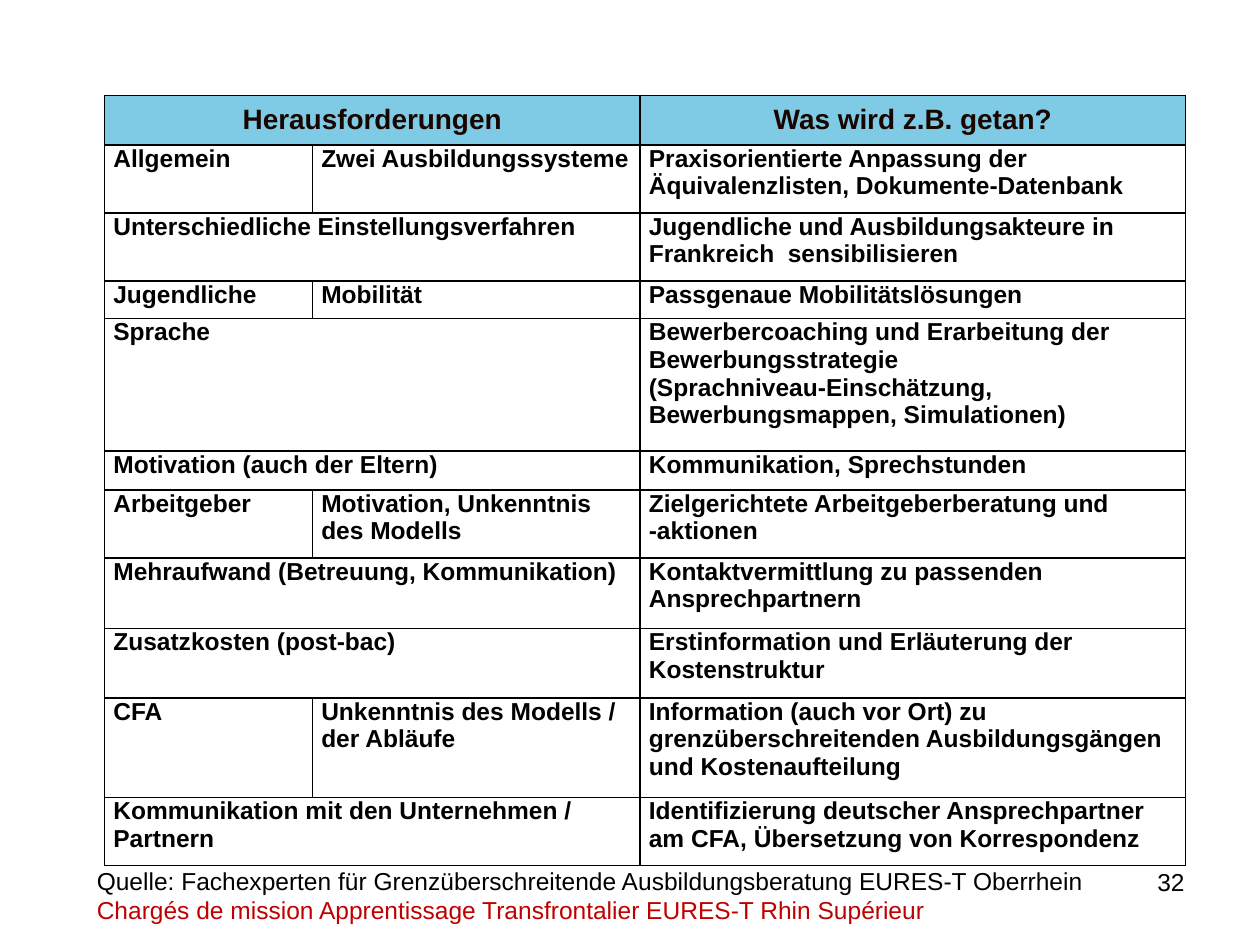
from lxml import etree
from pptx import Presentation
from pptx.dml.color import RGBColor
from pptx.enum.text import MSO_ANCHOR, PP_ALIGN
from pptx.oxml.ns import qn
from pptx.util import Inches, Pt

CENTER, LEFT, RIGHT = PP_ALIGN.CENTER, PP_ALIGN.LEFT, PP_ALIGN.RIGHT
MIDDLE, TOP = MSO_ANCHOR.MIDDLE, MSO_ANCHOR.TOP
FONT = "Arial"
COLORS = {"header": "0099CC", "header_text": "190601", "text": "000000",
          "border": "000000", "french": "C00000"}

# Content: row height, group, challenge, measure; no challenge means a merged cell
ROWS = [
    (0.39, "Herausforderungen", None, "Was wird z.B. getan?"),
    (0.54, "Allgemein", "Zwei Ausbildungssysteme",
     "Praxisorientierte Anpassung der\nÄquivalenzlisten, Dokumente-Datenbank"),
    (0.54, "Unterschiedliche Einstellungsverfahren", None,
     "Jugendliche und Ausbildungsakteure in Frankreich  sensibilisieren"),
    (0.3, "Jugendliche", "Mobilität", "Passgenaue Mobilitätslösungen"),
    (1.05, "Sprache", None,
     "Bewerbercoaching und Erarbeitung der\nBewerbungsstrategie\n"
     "(Sprachniveau-Einschätzung, Bewerbungsmappen, Simulationen)"),
    (0.31, "Motivation (auch der Eltern)", None, "Kommunikation, Sprechstunden"),
    (0.54, "Arbeitgeber", "Motivation, Unkenntnis des Modells",
     "Zielgerichtete Arbeitgeberberatung und -aktionen"),
    (0.56, "Mehraufwand (Betreuung, Kommunikation)", None,
     "Kontaktvermittlung zu passenden\nAnsprechpartnern"),
    (0.55, "Zusatzkosten (post-bac)", None,
     "Erstinformation und Erläuterung der\nKostenstruktur"),
    (0.79, "CFA", "Unkenntnis des Modells / der Abläufe",
     "Information (auch vor Ort) zu\ngrenzüberschreitenden Ausbildungsgängen\n"
     "und Kostenaufteilung"),
    (0.54, "Kommunikation mit den Unternehmen / Partnern", None,
     "Identifizierung deutscher Ansprechpartner am CFA, Übersetzung von Korrespondenz"),
]
COL_WIDTHS = [1.65, 2.6, 4.33]
SOURCE = [
    ("Quelle: Fachexperten für Grenzüberschreitende Ausbildungsberatung EURES-T Oberrhein",
     "text"),
    ("Chargés de mission Apprentissage Transfrontalier EURES-T Rhin Supérieur", "french"),
]
PAGE_NUMBER = [("32", "text")]


def style(p, size, color, align=LEFT, bold=False):
    p.alignment = align
    for r in p.runs:
        r.font.name = FONT
        r.font.size = Pt(size)
        r.font.bold = bold
        r.font.color.rgb = RGBColor.from_string(COLORS[color])


def add_borders(cell):
    tc_pr = cell._tc.get_or_add_tcPr()
    for side in ("lnL", "lnR", "lnT", "lnB"):
        ln = etree.SubElement(tc_pr, qn(f"a:{side}"), w=str(Pt(1)))
        fill = etree.SubElement(ln, qn("a:solidFill"))
        etree.SubElement(fill, qn("a:srgbClr"), val=COLORS["border"])


def fill_header(cell):
    cell.fill.solid()
    cell.fill.fore_color.rgb = RGBColor.from_string(COLORS["header"])
    color = cell._tc.tcPr.find(f"{qn('a:solidFill')}/{qn('a:srgbClr')}")
    etree.SubElement(color, qn("a:alpha"), val="50000")


def add_text(s, box, lines, align=LEFT):
    tf = s.shapes.add_textbox(*map(Inches, box)).text_frame
    tf.word_wrap = True
    tf.text = "\n".join(text for text, _ in lines)
    for p, (_, color) in zip(tf.paragraphs, lines):
        style(p, 14, color, align)


prs = Presentation()
prs.slide_width, prs.slide_height = Inches(10), Inches(7.5)
s = prs.slides.add_slide(prs.slide_layouts[6])

# Table of challenges and measures
heights = [row[0] for row in ROWS]
table = s.shapes.add_table(len(ROWS), len(COL_WIDTHS), Inches(0.83), Inches(0.76),
                           Inches(sum(COL_WIDTHS)), Inches(sum(heights))).table
table.horz_banding = False
for column, width in zip(table.columns, COL_WIDTHS):
    column.width = Inches(width)

for i, (height, *texts) in enumerate(ROWS):
    table.rows[i].height = Inches(height)
    header = i == 0
    if texts[1] is None:
        table.cell(i, 0).merge(table.cell(i, 1))
    for j, text in enumerate(texts):
        cell = table.cell(i, j)
        add_borders(cell)
        if header:
            fill_header(cell)
        else:
            cell.fill.background()
        cell.margin_left = cell.margin_right = Inches(0.07)
        cell.margin_top = cell.margin_bottom = 0
        cell.vertical_anchor = MIDDLE if header else TOP
        if text:
            cell.text_frame.text = text
        for p in cell.text_frame.paragraphs:
            if header:
                style(p, 16, "header_text", CENTER, bold=True)
            else:
                style(p, 14, "text", bold=True)

# Source and page number
add_text(s, (0.67, 6.82, 8.74, 0.55), SOURCE)
add_text(s, (7.17, 6.83, 2.33, 0.52), PAGE_NUMBER, RIGHT)

prs.save("out.pptx")
